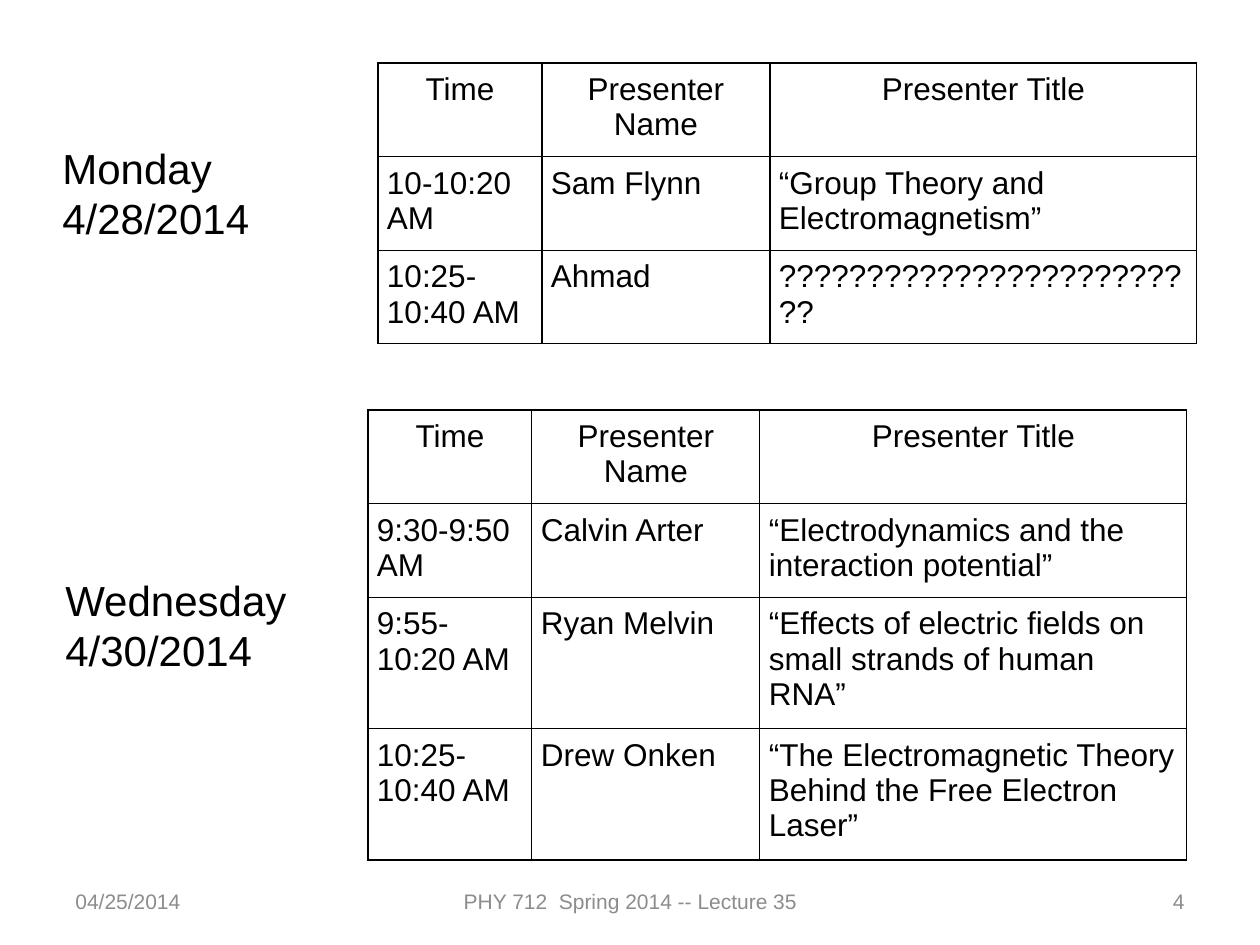
from lxml import etree
from pptx import Presentation
from pptx.dml.color import RGBColor
from pptx.enum.text import MSO_ANCHOR, PP_ALIGN
from pptx.oxml.ns import qn
from pptx.util import Emu, Pt

PX = 914400 // 126
LEFT, CENTER, RIGHT = PP_ALIGN.LEFT, PP_ALIGN.CENTER, PP_ALIGN.RIGHT
TOP, MIDDLE = MSO_ANCHOR.TOP, MSO_ANCHOR.MIDDLE

COLUMNS = (164, 228, 427)
HEADER = ("Time", "Presenter Name", "Presenter Title")
MONDAY = (
    ("10-10:20 AM", "Sam Flynn", "“Group Theory and Electromagnetism”"),
    ("10:25-10:40 AM", "Ahmad", "?" * 25),
)
WEDNESDAY = (
    ("9:30-9:50 AM", "Calvin Arter",
     "“Electrodynamics and the interaction potential”"),
    ("9:55-10:20 AM", "Ryan Melvin",
     "“Effects of electric fields on small strands of human RNA”"),
    ("10:25-10:40 AM", "Drew Onken",
     "“The Electromagnetic Theory Behind the Free Electron Laser”"),
)


def px(n):
    return Emu(n * PX)


def rgb(color):
    return RGBColor.from_string(color)


class Slide:
    font = "Arial"
    ink = "000000"
    muted = "8C8C8C"
    cell_margin = 9
    line_height = 35

    def __init__(self, prs):
        self.s = prs.slides.add_slide(prs.slide_layouts[6])

    def style(self, p, size, color, align):
        p.alignment = align
        p.font.name = self.font
        p.font.size = Pt(size)
        p.font.color.rgb = rgb(color)

    def text(self, x, y, w, h, lines, size=24, color=ink, align=LEFT, anchor=TOP):
        tf = self.s.shapes.add_textbox(px(x), px(y), px(w), px(h)).text_frame
        tf.word_wrap = True
        tf.vertical_anchor = anchor
        tf.text = "\n".join(lines)
        for p in tf.paragraphs:
            self.style(p, size, color, align)

    def footer(self, x, w, text, align):
        self.text(x, 876, w, 50, [text], 12, self.muted, align, MIDDLE)

    def border(self, cell):
        """Draw a thin line on all four sides of a cell."""
        tcPr = cell._tc.get_or_add_tcPr()
        for i, side in enumerate(("lnL", "lnR", "lnT", "lnB")):
            ln = etree.Element(qn(f"a:{side}"), w=str(Pt(0.75)))
            fill = etree.SubElement(ln, qn("a:solidFill"))
            etree.SubElement(fill, qn("a:srgbClr"), val=self.ink)
            tcPr.insert(i, ln)

    def schedule(self, x, y, talks, line_counts):
        """Add a table of talks; line_counts gives the text lines per row."""
        rows = (HEADER, *talks)
        heights = [2 * self.cell_margin + n * self.line_height for n in line_counts]
        table = self.s.shapes.add_table(
            len(rows), len(COLUMNS), px(x), px(y), px(sum(COLUMNS)), px(sum(heights))
        ).table
        table.first_row = table.horz_banding = False
        for column, width in zip(table.columns, COLUMNS):
            column.width = px(width)
        for r, (row, height) in enumerate(zip(rows, heights)):
            table.rows[r].height = px(height)
            for c, text in enumerate(row):
                cell = table.cell(r, c)
                cell.text = text
                cell.margin_left = cell.margin_right = px(self.cell_margin)
                cell.margin_top = cell.margin_bottom = px(self.cell_margin)
                cell.fill.background()
                self.border(cell)
                align = CENTER if r == 0 else LEFT
                self.style(cell.text_frame.paragraphs[0], 18, self.ink, align)


def main():
    prs = Presentation()
    prs.slide_width, prs.slide_height = px(1260), px(945)
    slide = Slide(prs)
    slide.footer(63, 294, "04/25/2014", LEFT)
    slide.footer(431, 399, "PHY 712  Spring 2014 -- Lecture 35", CENTER)
    slide.footer(903, 294, "4", RIGHT)
    slide.schedule(378, 63, MONDAY, (2, 2, 2))
    slide.schedule(368, 410, WEDNESDAY, (2, 2, 3, 3))
    slide.text(50, 136, 315, 115, ["Monday", "4/28/2014"])
    slide.text(53, 568, 315, 115, ["Wednesday", "4/30/2014"])
    prs.save("out.pptx")


if __name__ == "__main__":
    main()
